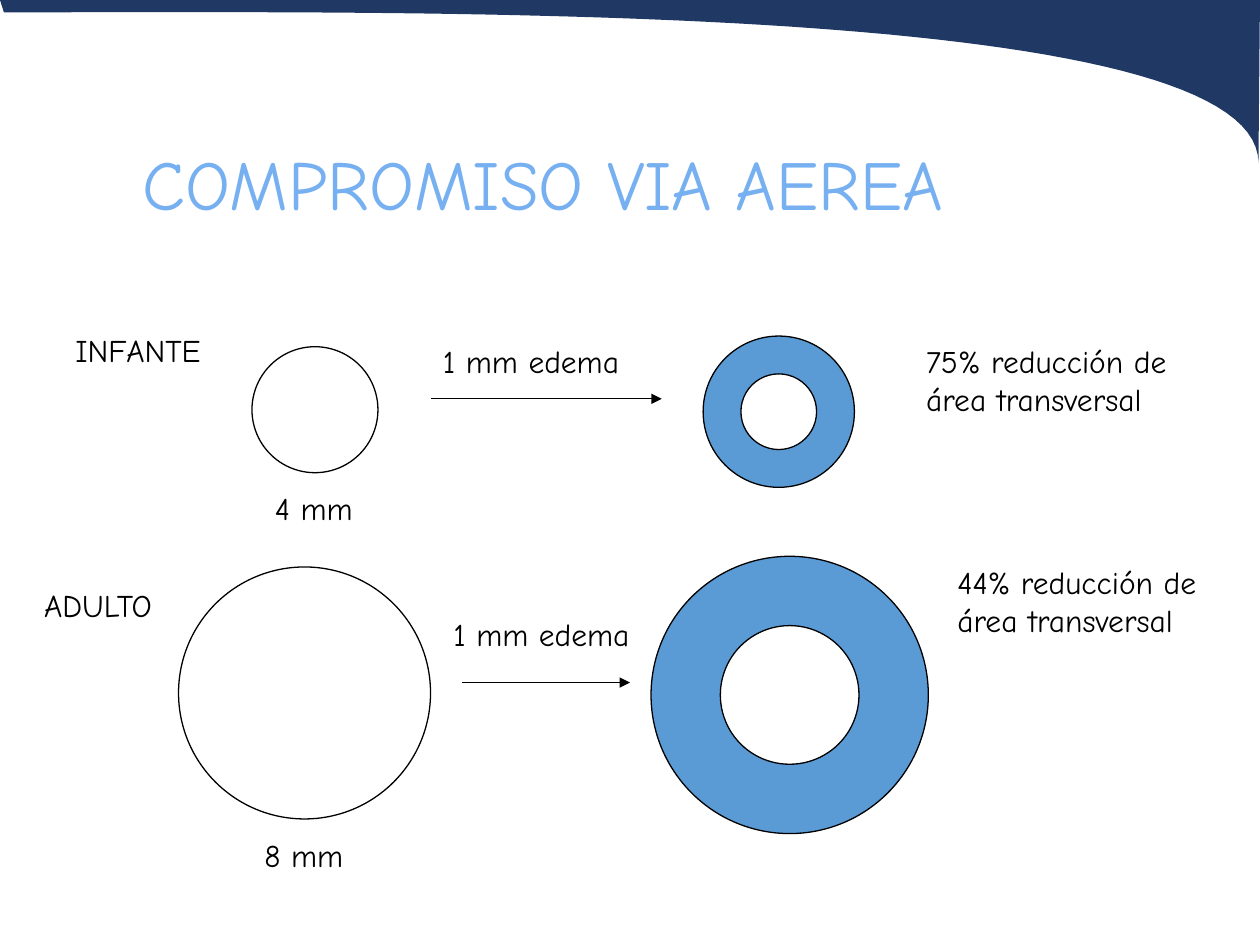
from lxml import etree
from pptx import Presentation
from pptx.dml.color import RGBColor
from pptx.enum.shapes import MSO_CONNECTOR, MSO_SHAPE
from pptx.enum.text import MSO_ANCHOR
from pptx.oxml.ns import qn
from pptx.util import Cm, Pt

NAVY = RGBColor(0x20, 0x38, 0x64)
SKY = RGBColor(0x77, 0xB0, 0xF1)
BLUE = RGBColor(0x5B, 0x9B, 0xD5)
BLACK = RGBColor(0, 0, 0)
OVAL, DONUT = MSO_SHAPE.OVAL, MSO_SHAPE.DONUT
STRAIGHT = MSO_CONNECTOR.STRAIGHT
TOP, MIDDLE = MSO_ANCHOR.TOP, MSO_ANCHOR.MIDDLE


def bezier(points, steps=60):
    """Return points along a cubic curve, from its start to its end."""
    curve = []
    for i in range(steps + 1):
        t = i / steps
        mix = ((1 - t) ** 3, 3 * t * (1 - t) ** 2, 3 * t * t * (1 - t), t ** 3)
        curve.append(tuple(sum(m * p[axis] for m, p in zip(mix, points))
                           for axis in (0, 1)))
    return curve


class Board:
    """Holds the style and the current slide; all lengths are in cm."""
    font = "Comic Neue"
    size = 18
    stroke = Pt(0.75)

    def __init__(self, slide):
        self.shapes = slide.shapes

    def band(self, points, fill):
        start, *rest = [(Cm(x), Cm(y)) for x, y in points]
        pen = self.shapes.build_freeform(*start)
        pen.add_line_segments(rest, close=True)
        shape = pen.convert_to_shape()
        shape.shadow.inherit = False
        shape.fill.solid()
        shape.fill.fore_color.rgb = fill
        shape.line.fill.background()

    def ring(self, kind, center, width, fill=None):
        x, y = center
        shape = self.shapes.add_shape(kind, Cm(x - width / 2), Cm(y - width / 2),
                                      Cm(width), Cm(width))
        shape.shadow.inherit = False
        if fill is None:
            shape.fill.background()
        else:
            shape.fill.solid()
            shape.fill.fore_color.rgb = fill
        shape.line.color.rgb = BLACK
        shape.line.width = self.stroke

    def arrow(self, left, right, y):
        link = self.shapes.add_connector(STRAIGHT, Cm(left), Cm(y), Cm(right), Cm(y))
        link.line.color.rgb = BLACK
        link.line.width = self.stroke
        etree.SubElement(link.line._get_or_add_ln(), qn("a:tailEnd"), type="triangle")
        etree.SubElement(link._element.spPr, qn("a:effectLst"))

    def text(self, words, left, top, width, height=1.02, size=size, color=BLACK,
             anchor=TOP, indent=0):
        box = self.shapes.add_textbox(Cm(left), Cm(top), Cm(width), Cm(height))
        frame = box.text_frame
        frame.word_wrap = True
        frame.vertical_anchor = anchor
        par = frame.paragraphs[0]
        if indent:
            par._p.get_or_add_pPr().set("marL", str(Cm(indent)))
        run = par.add_run()
        run.text = words
        run.font.name = self.font
        run.font.size = Pt(size)
        run.font.color.rgb = color


def main():
    deck = Presentation()
    deck.slide_width, deck.slide_height = Cm(25.4), Cm(19.05)
    board = Board(deck.slides.add_slide(deck.slide_layouts[6]))

    swoop = bezier([(25.37, 3.28), (25.35, 0), (8.53, 0.25), (0.08, 0.25)])
    board.band([(0, 0), (25.4, 0)] + swoop, NAVY)
    board.text("COMPROMISO VIA AEREA", 1.27, 2.11, 22.86, 3.12, size=40,
               color=SKY, anchor=MIDDLE, indent=1.35)

    # airway centre and width, swollen centre and width, arrow
    airways = [
        ((6.35, 8.26), 2.54, (15.7, 8.3), 3.05, (8.69, 13.34, 8.04)),
        ((6.14, 13.97), 5.08, (15.92, 14.01), 5.59, (9.31, 12.7, 13.76)),
    ]
    for center, width, middle, swollen, arrow in airways:
        board.ring(OVAL, center, width)
        board.ring(DONUT, middle, swollen, BLUE)
        board.arrow(*arrow)

    labels = [
        ("INFANTE", 1.27, 6.54, 3.6),
        ("4 mm", 5.29, 9.74, 2.33),
        ("1 mm edema", 8.68, 6.78, 5.08),
        ("75% reducción de área transversal", 18.42, 6.78, 6.14, 1.79),
        ("ADULTO", 0.64, 11.68, 3.49),
        ("8 mm", 5.08, 16.72, 2.75),
        ("1 mm edema", 8.89, 12.28, 4.24),
        ("44% reducción de área transversal", 19.05, 11.22, 5.93, 1.79),
    ]
    for label in labels:
        board.text(*label)

    deck.save("out.pptx")


if __name__ == "__main__":
    main()
